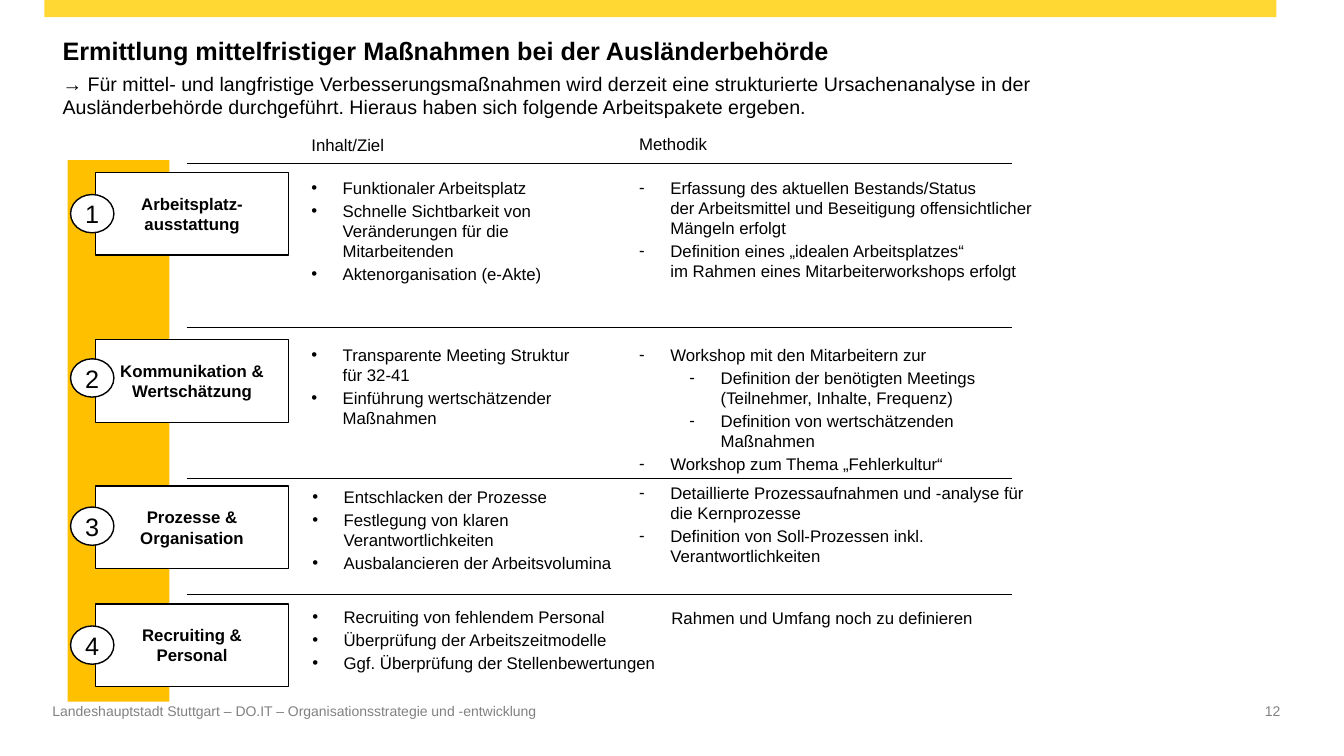
"""Build the slide on medium-term measures and their four work packages."""
from copy import deepcopy

from lxml import etree
from pptx import Presentation
from pptx import util as u
from pptx.dml.color import RGBColor
from pptx.enum import shapes, text
from pptx.oxml.ns import qn

COLORS = {"bar": "FFD833", "band": "FFC000", "ink": "000000", "paper": "FFFFFF", "muted": "818181"}
TITLE = "Ermittlung mittelfristiger Maßnahmen bei der Ausländerbehörde"
LEAD = ("→ Für mittel- und langfristige Verbesserungsmaßnahmen wird derzeit eine strukturierte "
        "Ursachenanalyse in der Ausländerbehörde durchgeführt. Hieraus haben sich folgende "
        "Arbeitspakete ergeben.")
FOOTER = "Landeshauptstadt Stuttgart – DO.IT – Organisationsstrategie und -entwicklung"
PAGE_NUMBER = "12"
HEADERS = [("Inhalt/Ziel", (2.99, 1.29, 0.93, 0.3)), ("Methodik", (6.24, 1.28, 1.17, 0.3))]

PACKAGES = [
    {"name": "Arbeitsplatz-ausstattung", "line": 1.62, "card": 1.71, "badge": 1.93,
     "goals_at": (2.99, 1.71, 3.29, 1.17), "methods_at": (6.24, 1.71, 4.32, 1.14),
     "goals": [(0, "Funktionaler Arbeitsplatz"),
               (0, "Schnelle Sichtbarkeit von Veränderungen für die Mitarbeitenden"),
               (0, "Aktenorganisation (e-Akte)")],
     "methods": [(0, "Erfassung des aktuellen Bestands/Status\nder Arbeitsmittel und "
                     "Beseitigung offensichtlicher Mängeln erfolgt"),
                 (0, "Definition eines „idealen Arbeitsplatzes“\n"
                     "im Rahmen eines Mitarbeiterworkshops erfolgt")]},
    {"name": "Kommunikation & Wertschätzung", "line": 3.25, "card": 3.37, "badge": 3.56,
     "goals_at": (2.99, 3.37, 3.29, 0.94), "methods_at": (6.24, 3.37, 4.07, 1.63),
     "goals": [(0, "Transparente Meeting Struktur\nfür 32-41"),
               (0, "Einführung wertschätzender Maßnahmen")],
     "methods": [(0, "Workshop mit den Mitarbeitern zur"),
                 (1, "Definition der benötigten Meetings\n(Teilnehmer, Inhalte, Frequenz)"),
                 (1, "Definition von wertschätzenden Maßnahmen"),
                 (0, "Workshop zum Thema „Fehlerkultur“")]},
    {"name": "Prozesse & Organisation", "line": 4.75, "card": 4.82, "badge": 5.03,
     "goals_at": (3, 4.78, 3.29, 0.96), "methods_at": (6.24, 4.74, 4.07, 0.94),
     "goals": [(0, "Entschlacken der Prozesse"),
               (0, "Festlegung von klaren Verantwortlichkeiten"),
               (0, "Ausbalancieren der Arbeitsvolumina")],
     "methods": [(0, "Detaillierte Prozessaufnahmen und -analyse für die Kernprozesse"),
                 (0, "Definition von Soll-Prozessen inkl. Verantwortlichkeiten")]},
    {"name": "Recruiting & Personal", "line": 5.9, "card": 5.99, "badge": 6.21,
     "goals_at": (3, 5.97, 3.67, 0.99), "methods_at": (6.56, 5.98, 3.29, 0.3),
     "goals": [(0, "Recruiting von fehlendem Personal"),
               (0, "Überprüfung der Arbeitszeitmodelle"),
               (0, "Ggf. Überprüfung der Stellenbewertungen")],
     "methods": [(None, "Rahmen und Umfang noch zu definieren")]},
]


def inches(values):
    return [u.Inches(value) for value in values]


def color(name):
    return RGBColor.from_string(COLORS[name])


def set_text(para, words, size=12, ink="ink", bold=False, align="LEFT"):
    para.text = words
    para.alignment = getattr(text.PP_ALIGN, align)
    style = {"name": "Arial", "size": u.Pt(size), "bold": bold}
    for span in para.runs:
        for key, value in style.items():
            setattr(span.font, key, value)
        span.font.color.rgb = color(ink)
    for line_break in para._p.findall(qn("a:br")):
        line_break.append(deepcopy(para.runs[0]._r.find(qn("a:rPr"))))


def set_frame(shape, inset=None, wrap=True, anchor="TOP"):
    frame = shape.text_frame
    frame.auto_size = text.MSO_AUTO_SIZE.NONE
    frame.word_wrap = wrap
    frame.vertical_anchor = getattr(text.MSO_ANCHOR, anchor)
    if inset is not None:
        for side in ("left", "top", "right", "bottom"):
            setattr(frame, f"margin_{side}", u.Inches(inset))
    return frame


def add_label(page, at, words, inset=None, wrap=True, **style):
    box = page.shapes.add_textbox(*inches(at))
    set_text(set_frame(box, inset, wrap).paragraphs[0], words, **style)


def add_panel(page, kind, at, fill, outlined=False):
    shape = page.shapes.add_shape(getattr(shapes.MSO_SHAPE, kind), *inches(at))
    shape.shadow.inherit = False
    shape.fill.solid()
    shape.fill.fore_color.rgb = color(fill)
    if outlined:
        shape.line.color.rgb = color("ink")
        shape.line.width = u.Pt(1)
    else:
        shape.line.fill.background()
    return shape


def add_rule(page, top):
    rule = page.shapes.add_connector(shapes.MSO_CONNECTOR.STRAIGHT, *inches((1.85, top, 10.04, top)))
    rule.line.color.rgb = color("ink")
    rule.line.width = u.Pt(0.75)
    etree.SubElement(rule._element.spPr, qn("a:effectLst"))


def add_list(page, at, items, bullet):
    frame = set_frame(page.shapes.add_textbox(*inches(at)))
    for index, (level, words) in enumerate(items):
        para = frame.paragraphs[0] if index == 0 else frame.add_paragraph()
        para.space_after = u.Pt(2)
        if level is not None:
            para.level = level
            props = para._p.get_or_add_pPr()
            props.set("marL", str(u.Inches(0.31 + 0.5 * level)))
            props.set("indent", str(u.Inches(-0.31)))
            etree.SubElement(props, qn("a:buFont"), typeface="Arial")
            etree.SubElement(props, qn("a:buChar"), char=bullet)
        set_text(para, words)


def place(holder, at, words, **style):
    holder.left, holder.top, holder.width, holder.height = inches(at)
    para = set_frame(holder).paragraphs[0]
    para.space_before = u.Pt(0)
    props = para._p.get_or_add_pPr()
    props.set("marL", "0")
    props.set("indent", "0")
    etree.SubElement(props, qn("a:buNone"))
    set_text(para, words, **style)


def add_package(page, number, package):
    add_rule(page, package["line"])
    card = add_panel(page, "RECTANGLE", (0.95, package["card"], 1.91, 0.82), "paper", True)
    set_text(set_frame(card, anchor="MIDDLE").paragraphs[0], package["name"], bold=True, align="CENTER")
    badge = add_panel(page, "OVAL", (0.7, package["badge"], 0.43, 0.38), "paper", True)
    frame = set_frame(badge, inset=0, wrap=False, anchor="MIDDLE")
    set_text(frame.paragraphs[0], str(number), size=18, align="CENTER")
    add_list(page, package["goals_at"], package["goals"], "•")
    add_list(page, package["methods_at"], package["methods"], "-")


def main():
    deck = Presentation()
    deck.slide_width, deck.slide_height = inches((13.33, 7.5))
    page = deck.slides.add_slide(deck.slide_layouts[1])
    add_panel(page, "RECTANGLE", (0.44, 0, 12.22, 0.17), "bar")
    place(page.shapes.title, (0.52, 0.3, 11.2, 0.39), TITLE, size=18, bold=True)
    place(page.placeholders[1], (0.52, 0.66, 10.2, 0.58), LEAD, size=14)
    add_panel(page, "RECTANGLE", (0.67, 1.59, 1.01, 5.37), "band")
    for words, at in HEADERS:
        add_label(page, at, words, wrap=False)
    for number, package in enumerate(PACKAGES, 1):
        add_package(page, number, package)
    add_label(page, (0.52, 6.97, 7.35, 0.39), FOOTER, inset=0, size=10, ink="muted")
    add_label(page, (11.6, 6.97, 1.1, 0.39), PAGE_NUMBER, inset=0, size=10, ink="muted", align="RIGHT")
    deck.save("out.pptx")


if __name__ == "__main__":
    main()
